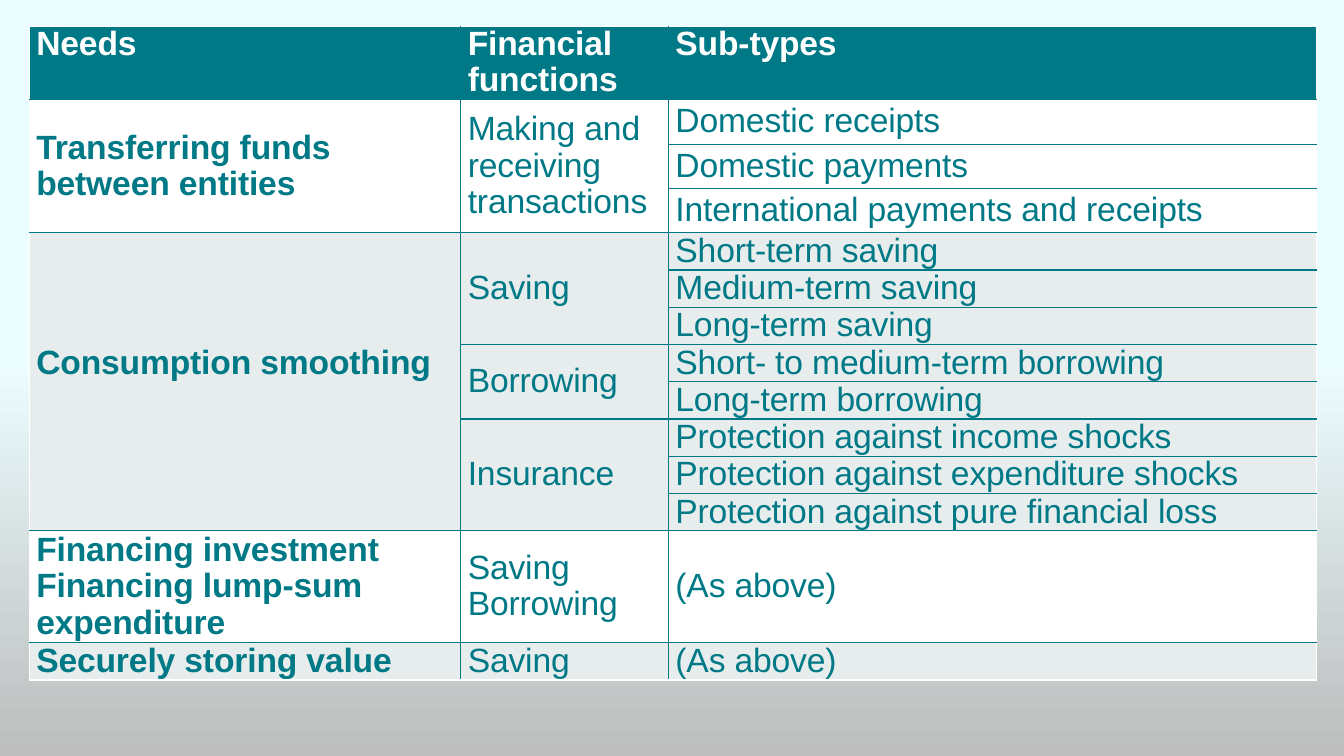
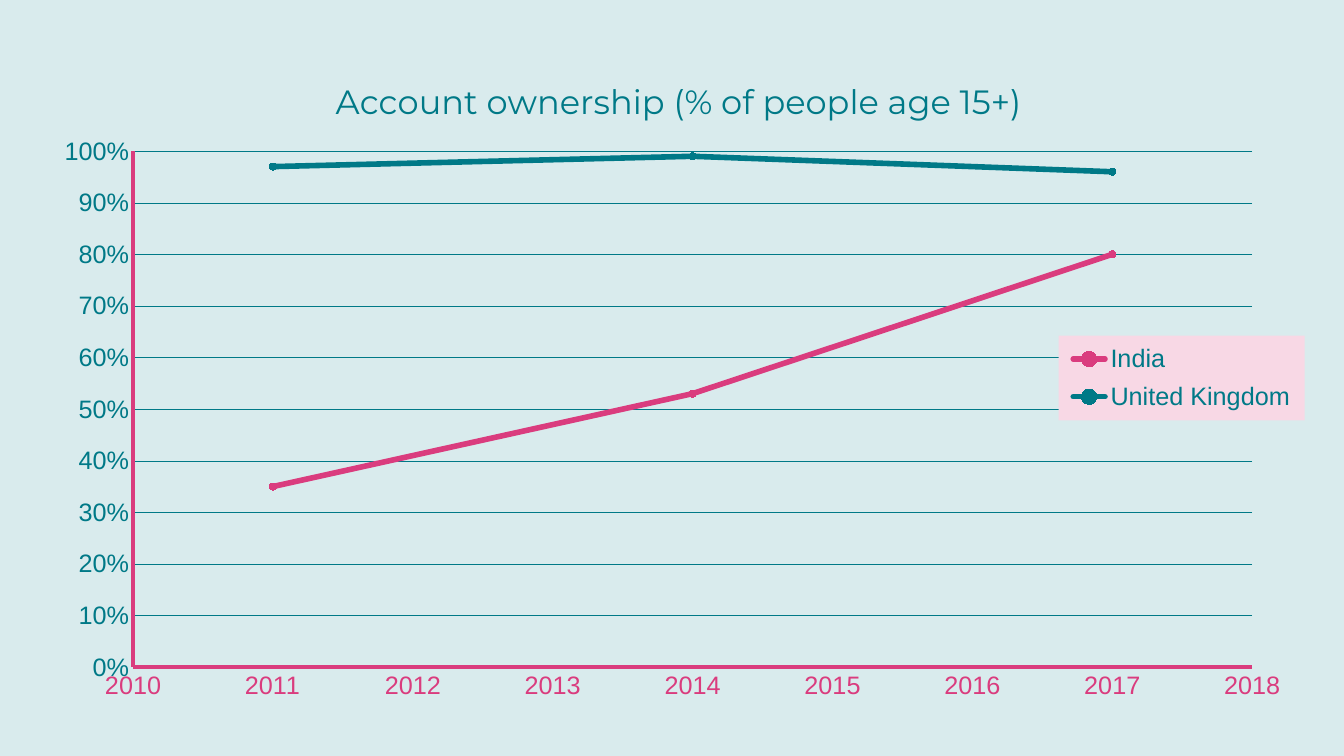
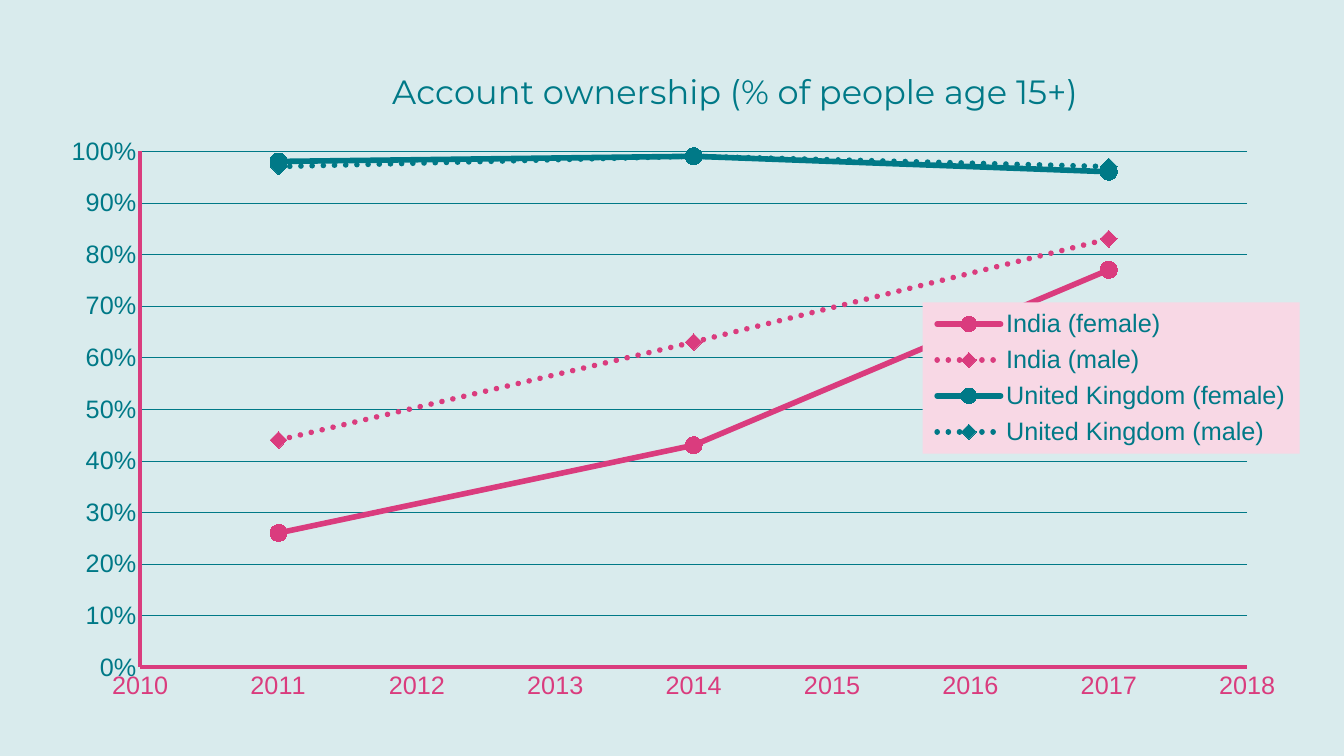
from pptx import Presentation
from pptx.chart.data import XyChartData
from pptx.dml.color import RGBColor
from pptx.enum.chart import XL_CHART_TYPE as Kind, XL_LEGEND_POSITION as Side
from pptx.enum.chart import XL_MARKER_STYLE as Mark, XL_TICK_MARK as Tick
from pptx.enum.dml import MSO_LINE as Dash
from pptx.enum.text import MSO_ANCHOR as Anchor
from pptx.oxml import parse_xml
from pptx.oxml.ns import nsdecls, qn
from pptx.util import Inches, Pt

HUES = {"teal": "007987", "pink": "DA3C7E", "white": "FFFFFF", "grey": "E7ECED",
        "mist": "D9EBED", "blush": "F8D8E5", "sky": "ECFDFF", "ash": "BDBDBD"}
RGB = {name: RGBColor.from_string(code) for name, code in HUES.items()}


def style(font, size, hue, face="Arial", bold=False):
    font.size, font.name, font.bold = Pt(size), face, bold
    font.color.rgb = RGB[hue]


def place(host, spot, frame, box, inner=False):
    for old in host.findall(qn("c:layout")):
        host.remove(old)
    left, top, wide, high = frame
    parts = [(box[0] - left) / wide, (box[1] - top) / high]
    if len(box) == 4:
        parts += [box[2] / wide, box[3] / high]
    keys = "xywh"[:len(parts)]
    xml = '<c:layoutTarget val="inner"/>' if inner else ""
    xml += "".join(f'<c:{key}Mode val="edge"/>' for key in "xy")
    xml += "".join(f'<c:{key} val="{part:.4f}"/>' for key, part in zip(keys, parts))
    host.insert(spot, parse_xml(
        f'<c:layout {nsdecls("c")}><c:manualLayout>{xml}</c:manualLayout></c:layout>'))


deck = Presentation()
deck.slide_width, deck.slide_height = Inches(13.33), Inches(7.5)
blank = deck.slide_layouts[6]

rows = [
    (0.73, "Needs", "Financial functions", "Sub-types"),
    (0.44, "Transferring funds between entities",
     "Making and receiving transactions", "Domestic receipts"),
    (0.44, "", "", "Domestic payments"),
    (0.44, "", "", "International payments and receipts"),
    (0.37, "Consumption smoothing", "Saving", "Short-term saving"),
    (0.37, "", "", "Medium-term saving"),
    (0.37, "", "", "Long-term saving"),
    (0.37, "", "Borrowing", "Short- to medium-term borrowing"),
    (0.37, "", "", "Long-term borrowing"),
    (0.37, "", "Insurance", "Protection against income shocks"),
    (0.37, "", "", "Protection against expenditure shocks"),
    (0.37, "", "", "Protection against pure financial loss"),
    (1.11, "Financing investment\nFinancing lump-sum expenditure",
     "Saving\nBorrowing", "(As above)"),
    (0.37, "Securely storing value", "Saving", "(As above)"),
]
widths = [4.28, 2.06, 6.43]
last = len(rows) - 1

slide = deck.slides.add_slide(blank)
fill = slide.background.fill
fill.gradient()
fill.gradient_angle = 270
for stop, point, hue in zip(fill.gradient_stops, (0.48, 1), ("sky", "ash")):
    stop.position, stop.color.rgb = point, RGB[hue]

table = slide.shapes.add_table(
    len(rows), 3, Inches(0.29), Inches(0.26),
    Inches(sum(widths)), Inches(sum(row[0] for row in rows))).table
table.horz_banding = False
for col, width in zip(table.columns, widths):
    col.width = Inches(width)

band = 0
for y, (high, *texts) in enumerate(rows):
    table.rows[y].height = Inches(high)
    if y and texts[0]:
        band += 1
    for x, text in enumerate(texts):
        if not text:
            continue
        cell = table.cell(y, x)
        end = y
        while end < last and not rows[end + 1][x + 1]:
            end += 1
        if end > y:
            cell.merge(table.cell(end, x))
        cell.text = text
        cell.margin_left = cell.margin_right = Inches(0.07)
        cell.margin_top = cell.margin_bottom = 0
        cell.vertical_anchor = Anchor.MIDDLE if y else Anchor.TOP
        cell.fill.solid()
        cell.fill.fore_color.rgb = RGB[("grey", "white")[band % 2] if y else "teal"]
        for para in cell.text_frame.paragraphs:
            para.line_spacing = 0.97
            style(para.font, 24, "teal" if y else "white", bold=not y or x == 0)
            para._p.pPr.find(qn("a:defRPr")).set("spc", "-10")
        edges = {"L": x == 0, "R": x == 2, "T": y == 0, "B": end == last}
        for spot, (side, outer) in enumerate(edges.items()):
            code = HUES["white" if outer else "teal"]
            cell._tc.get_or_add_tcPr().insert(spot, parse_xml(
                f'<a:ln{side} {nsdecls("a")} w="12700"><a:solidFill>'
                f'<a:srgbClr val="{code}"/></a:solidFill></a:ln{side}>'))
table.cell(4, 0).margin_bottom = Inches(0.37)

years = (2011, 2014, 2017)
charts = [
    dict(frame=(0.39, 0.43, 12.56, 6.64), title=(3.27, 0.71),
         plot=(1.32, 1.5, 11.1, 5.12), legend=(10.5, 3.33, 2.44, 0.84), size=5,
         lines=[("India", "pink", False, (0.35, 0.53, 0.8)),
                ("United Kingdom", "teal", False, (0.97, 0.99, 0.96))]),
    dict(frame=(0.46, 0.43, 12.44, 6.64), title=(3.83, 0.61),
         plot=(1.39, 1.5, 10.98, 5.12), legend=(9.15, 3, 3.74, 1.5), size=12,
         lines=[("India (female)", "pink", False, (0.26, 0.43, 0.77)),
                ("India (male)", "pink", True, (0.44, 0.63, 0.83)),
                ("United Kingdom (female)", "teal", False, (0.98, 0.99, 0.96)),
                ("United Kingdom (male)", "teal", True, (0.97, 0.99, 0.97))]),
]

for item in charts:
    slide = deck.slides.add_slide(blank)
    slide.background.fill.solid()
    slide.background.fill.fore_color.rgb = RGB["mist"]
    data = XyChartData(number_format="0%")
    for name, hue, dotted, shares in item["lines"]:
        line = data.add_series(name)
        for year, share in zip(years, shares):
            line.add_data_point(year, share)
    frame = item["frame"]
    chart = slide.shapes.add_chart(
        Kind.XY_SCATTER_LINES, *map(Inches, frame), data).chart
    style(chart.font, 18, "teal")
    chart.plots[0].vary_by_categories = False

    for series, (name, hue, dotted, shares) in zip(chart.plots[0].series, item["lines"]):
        series.smooth = False
        pen = series.format.line
        pen.color.rgb, pen.width = RGB[hue], Pt(4)
        if dotted:
            pen.dash_style = Dash.ROUND_DOT
        series._element.spPr.find(qn("a:ln")).set("cap", "rnd")
        mark = series.marker
        mark.style = Mark.DIAMOND if dotted else Mark.CIRCLE
        mark.size = item["size"]
        mark.format.fill.solid()
        mark.format.fill.fore_color.rgb = RGB[hue]
        mark.format.line.color.rgb = RGB[hue]

    scales = [(chart.category_axis, 2010, 2018, 1, "General", "pink"),
              (chart.value_axis, 0, 1, 0.1, "0%", "teal")]
    for axis, low, high, step, form, hue in scales:
        axis.minimum_scale, axis.maximum_scale, axis.major_unit = low, high, step
        axis.major_tick_mark = axis.minor_tick_mark = Tick.NONE
        axis.has_major_gridlines = False
        axis.format.line.color.rgb = RGB["pink"]
        axis.format.line.width = Pt(2.5)
        axis.tick_labels.number_format = form
        axis.tick_labels.number_format_is_linked = False
        style(axis.tick_labels.font, 18, hue)
    grid = chart.value_axis.major_gridlines.format.line
    grid.color.rgb, grid.width = RGB["teal"], Pt(0.25)

    chart.has_title = True
    title = chart.chart_title
    title.text_frame.text = "Account ownership (% of people age 15+)"
    style(title.text_frame.paragraphs[0].font, 24, "teal", "Montserrat")
    place(title._element, 1, frame, item["title"])

    chart.has_legend = True
    legend = chart.legend
    legend.position = Side.RIGHT
    legend.include_in_layout = True
    style(legend.font, 18, "teal")
    place(legend._element, 1, frame, item["legend"])
    legend._element.find(qn("c:txPr")).addprevious(parse_xml(
        f'<c:spPr {nsdecls("c", "a")}><a:solidFill>'
        f'<a:srgbClr val="{HUES["blush"]}"/></a:solidFill></c:spPr>'))
    place(chart._chartSpace.chart.plotArea, 0, frame, item["plot"], inner=True)

deck.save("out.pptx")
